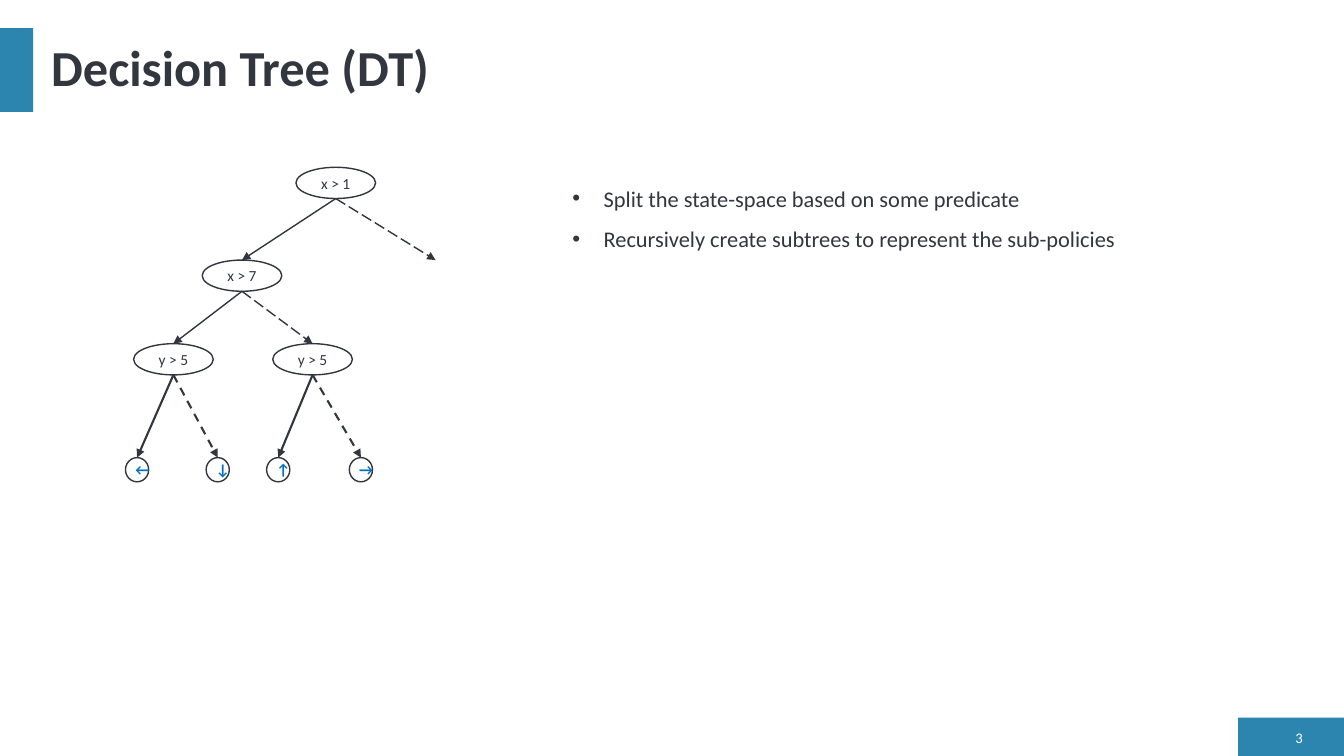
from lxml import etree
from pptx import Presentation
from pptx.dml.color import RGBColor
from pptx.enum.dml import MSO_LINE
from pptx.enum.shapes import MSO_CONNECTOR, MSO_SHAPE
from pptx.enum.text import MSO_ANCHOR, PP_ALIGN
from pptx.oxml.ns import qn
from pptx.util import Inches, Pt

RECTANGLE, OVAL = MSO_SHAPE.RECTANGLE, MSO_SHAPE.OVAL
STRAIGHT = MSO_CONNECTOR.STRAIGHT
DASH, LONG_DASH = MSO_LINE.DASH, MSO_LINE.LONG_DASH
TOP, MIDDLE = MSO_ANCHOR.TOP, MSO_ANCHOR.MIDDLE
LEFT, CENTER, RIGHT = PP_ALIGN.LEFT, PP_ALIGN.CENTER, PP_ALIGN.RIGHT

COLORS = {"accent": "2C85AE", "ink": "32363F", "action": "0070C0", "white": "FFFFFF"}
FONT = "Calibri"
WIDTH, HEIGHT = 13.33, 7.5
BULLET_INDENT = 0.31
OVAL_TOP_SITE = 0

TREE_BOX = (1.24, 1.66, 3.08, 3.12)
PREDICATE_SIZE = (0.79, 0.31)
ACTION_SIZE = (0.23, 0.24)
ROWS = (0, 0.92, 1.75, 2.88)  # tops of the tree levels inside the tree box
# name: (label, level, centre x inside the tree box)
NODES = {
    "root": ("x > 1", 0, 2.09),
    "inner": ("x > 7", 1, 1.16),
    "low": ("y > 5", 2, 0.48),
    "high": ("y > 5", 2, 1.86),
    "left": ("←", 3, 0.12),
    "down": ("↓", 3, 0.92),
    "up": ("↑", 3, 1.52),
    "right": ("→", 3, 2.34),
}
# parent: (child if true, child if false); None is a branch left open
BRANCHES = {
    "root": ("inner", None),
    "inner": ("low", "high"),
    "low": ("left", "down"),
    "high": ("up", "right"),
}
BULLETS = (
    "Split the state-space based on some predicate",
    "Recursively create subtrees to represent the sub-policies",
)


def color(name):
    return RGBColor.from_string(COLORS[name])


def inches(values):
    return [Inches(value) for value in values]


def write(shape, lines, size, ink="ink", bold=False, anchor=MIDDLE, **paragraph_format):
    frame = shape.text_frame
    frame.word_wrap = True
    frame.vertical_anchor = anchor
    frame.text = "\n".join(lines)
    for paragraph in frame.paragraphs:
        for name, value in paragraph_format.items():
            setattr(paragraph, name, value)
        font = paragraph.runs[0].font
        for name, value in {"name": FONT, "size": Pt(size), "bold": bold}.items():
            setattr(font, name, value)
        font.color.rgb = color(ink)
    return frame


def add_bar(slide, box):
    bar = slide.shapes.add_shape(RECTANGLE, *inches(box))
    bar.shadow.inherit = False
    bar.fill.solid()
    bar.fill.fore_color.rgb = color("accent")
    bar.line.fill.background()


def add_header(slide, box, title):
    left, top, width, height = box
    add_bar(slide, (left, top, 0.33, height))
    title_box = slide.shapes.add_textbox(*inches((left + 0.41, top, width - 0.73, height)))
    write(title_box, [title], 36, bold=True, alignment=LEFT, line_spacing=0.9)


def add_page_number(slide, box, number):
    left, top, width, _ = box
    add_bar(slide, box)
    number_box = slide.shapes.add_textbox(*inches((left + 0.32, top + 0.08, width - 0.63, 0.23)))
    write(number_box, [number], 10.5, "white", alignment=RIGHT)


def add_node(slide, box, name):
    label, level, center = NODES[name]
    is_action = name not in BRANCHES
    width, height = ACTION_SIZE if is_action else PREDICATE_SIZE
    node = slide.shapes.add_shape(
        OVAL, *inches((box[0] + center - width / 2, box[1] + ROWS[level], width, height)))
    node.shadow.inherit = False
    node.fill.background()
    node.line.color.rgb = color("ink")
    node.line.width = Pt(1)
    write(node, [label], 11, "action" if is_action else "ink", is_action, alignment=CENTER)
    return node


def add_arrow(slide, start, end, width, dash):
    arrow = slide.shapes.add_connector(STRAIGHT, *start, *end)
    arrow.line.color.rgb = color("ink")
    arrow.line.width = Pt(width)
    if dash is not None:
        arrow.line.dash_style = dash
    etree.SubElement(arrow.line._get_or_add_ln(), qn("a:tailEnd"), type="triangle")
    etree.SubElement(arrow._element.spPr, qn("a:effectLst"))
    return arrow


def add_tree(slide, box):
    """Draw true branches solid and false ones dashed; the open branch ends at the box's right edge."""
    left, top, width, _ = box
    nodes = {name: add_node(slide, box, name) for name in NODES}
    for parent, children in BRANCHES.items():
        node = nodes[parent]
        level = NODES[parent][1]
        start = node.left + node.width // 2, node.top + node.height
        to_action = children[0] not in BRANCHES
        for child, dash in zip(children, (None, DASH if to_action else LONG_DASH)):
            center = NODES[child][2] if child else width
            end = inches((left + center, top + ROWS[level + 1]))
            arrow = add_arrow(slide, start, end, 1.5 if to_action else 1, dash)
            if child:
                arrow.end_connect(nodes[child], OVAL_TOP_SITE)


def add_bullets(slide, box, lines):
    text_box = slide.shapes.add_textbox(*inches(box))
    frame = write(text_box, lines, 16, anchor=TOP, alignment=LEFT, line_spacing=1.5)
    indent = Inches(BULLET_INDENT)
    for paragraph in frame.paragraphs:
        properties = paragraph._p.get_or_add_pPr()
        properties.set("marL", str(indent))
        properties.set("indent", str(-indent))
        etree.SubElement(properties, qn("a:buFont"), typeface="Arial")
        etree.SubElement(properties, qn("a:buChar"), char="•")


def main():
    presentation = Presentation()
    presentation.slide_width, presentation.slide_height = inches((WIDTH, HEIGHT))
    slide = presentation.slides.add_slide(presentation.slide_layouts[6])
    add_page_number(slide, (WIDTH - 1.05, HEIGHT - 0.38, 1.05, 0.38), "3")
    add_header(slide, (0, 0.28, WIDTH, 0.83), "Decision Tree (DT)")
    add_tree(slide, TREE_BOX)
    add_bullets(slide, (5.58, 1.65, 6.84, 0.87), BULLETS)
    presentation.save("out.pptx")


if __name__ == "__main__":
    main()
